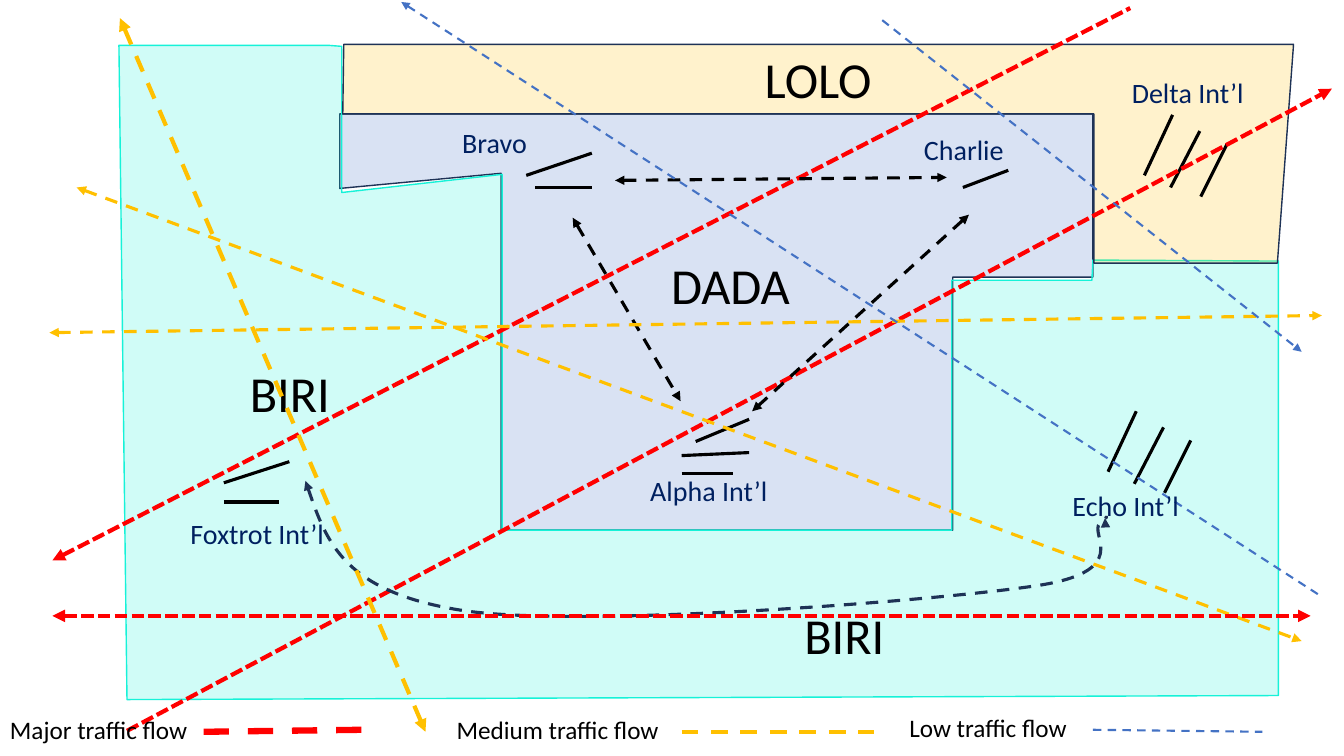
from dataclasses import dataclass
from itertools import chain

from lxml import etree
from pptx import Presentation
from pptx.dml.color import RGBColor
from pptx.enum import dml, shapes, text
from pptx.oxml import ns
from pptx import util as u

SOLID = None
DASH = dml.MSO_LINE.DASH
SHORT = dml.MSO_LINE.SQUARE_DOT


@dataclass(frozen=True)
class Theme:
    font: str = "Calibri"
    black: str = "000000"
    navy: str = "002060"
    edge: str = "1E3256"
    red: str = "FF0000"
    gold: str = "FFC000"
    blue: str = "4472C4"
    aqua: str = "16F2D8"
    sector: int = 36
    airport: int = 20
    legend: int = 18


@dataclass(frozen=True)
class Area:
    fill: str
    line: str
    points: list


@dataclass(frozen=True)
class Pen:
    color: str
    width: float
    dash: object = SOLID


@dataclass(frozen=True)
class Line:
    pen: Pen
    start: tuple
    end: tuple
    heads: str = ""  # any of "head" and "tail"


@dataclass(frozen=True)
class Label:
    words: str
    box: tuple
    size: int
    color: str = "000000"
    wrap: bool = False


T = Theme()
BOTH = "head tail"
RUNWAY = Pen(T.black, 2.25)
LINK = Pen(T.black, 2.25, DASH)
MAJOR = Pen(T.red, 3, SHORT)
MEDIUM = Pen(T.gold, 2.25, DASH)
BOLD = Pen(T.gold, 3, DASH)
LOW = Pen(T.blue, 1.5, DASH)
CURVE = Pen(T.edge, 2.25, DASH)

# Airspace sectors
AREAS = [
    Area(T.blue, T.edge, [
        (4.97, 1.72), (4.97, 5.26), (9.45, 5.26), (9.45, 2.75), (10.84, 2.75),
        (10.84, 1.13), (3.37, 1.13), (3.37, 1.87)]),
    Area(T.aqua, T.aqua, [
        (3.26, 0.45), (1.18, 0.45), (1.26, 6.94), (12.68, 6.9), (12.68, 2.59),
        (10.84, 2.58), (10.83, 2.78), (9.44, 2.78), (9.44, 5.26), (4.98, 5.26),
        (4.98, 1.73), (3.39, 1.91), (3.39, 0.46)]),
    Area(T.gold, T.edge, [
        (3.41, 0.44), (12.83, 0.44), (12.67, 2.61), (10.85, 2.61),
        (10.85, 1.13), (3.4, 1.13)]),
]
SECTORS = [
    Label("DADA", (6.55, 2.47, 1.39, 0.71), T.sector),
    Label("LOLO", (7.48, 0.43, 1.27, 0.71), T.sector),
    Label("BIRI", (7.87, 5.94, 1.01, 0.71), T.sector),
    Label("BIRI", (2.37, 3.54, 1.01, 0.71), T.sector),
]

# Runways: Echo repeats Delta's layout, shifted
DELTA = [((11.35, 1.74), (11.63, 1.14)), ((11.61, 1.86), (11.9, 1.3)),
         ((11.91, 1.95), (12.17, 1.43))]
ECHO = [tuple((x - 0.36, y + 2.94) for x, y in strip) for strip in DELTA]
ALPHA = [((6.9, 4.38), (7.43, 4.16)), ((6.76, 4.52), (7.43, 4.49)),
         ((6.76, 4.7), (7.27, 4.7))]
BRAVO = [((5.22, 1.74), (5.87, 1.52)), ((5.31, 1.86), (5.87, 1.86))]
CHARLIE = [((9.55, 1.86), (10, 1.69))]
FOXTROT = [((2.22, 4.79), (2.87, 4.58)), ((2.22, 4.98), (2.77, 4.98))]
STRIPS = [Line(RUNWAY, *strip) for strip in
          chain(ALPHA, BRAVO, CHARLIE, DELTA, ECHO, FOXTROT)]

# Traffic flows
DIAGONALS = [
    Line(MAJOR, (1.26, 7.25), (13.21, 0.88), "tail"),
    Line(MAJOR, (0.52, 5.56), (11.21, 0.08), "head"),
]
BEND = [(3.03, 4.77), (3.22, 5.33), (3.41, 5.88), (4.61, 6.06), (5.8, 6.23),
        (9.16, 5.97), (10.22, 5.82), (11.27, 5.68), (10.79, 5.3),
        (10.91, 5.19), (11.03, 5.08), (11, 5.11), (10.96, 5.14)]
FLOWS = [
    Line(LINK, (6.1, 1.79), (9.39, 1.76), BOTH),
    Line(LINK, (5.68, 2.16), (6.75, 3.98), BOTH),
    Line(LINK, (9.61, 2.13), (7.46, 4.08), BOTH),
    Line(MEDIUM, (0.49, 3.3), (13.11, 3.13), BOTH),
    Line(MEDIUM, (0.76, 1.86), (12.91, 6.36), BOTH),
    Line(LOW, (8.75, 0.2), (12.91, 3.49), "tail"),
    Line(LOW, (3.98, 0.02), (13.11, 5.92), "head"),
    Line(BOLD, (1.19, 0.18), (4.22, 7.26), BOTH),
]
BASE = Line(MAJOR, (0.52, 6.11), (13, 6.11), BOTH)

# Legend and airport names
KEYS = [
    Line(LOW, (10.84, 7.24), (12.52, 7.26)),
    Line(Pen(T.red, 4.5, DASH), (2.02, 7.26), (3.6, 7.24)),
    Line(BOLD, (6.76, 7.26), (8.67, 7.26)),
]
NAMES = [
    Label("Major traffic flow", (0, 7.04, 2.11, 0.4), T.legend, wrap=True),
    Label("Medium traffic flow", (4.43, 7.04, 2.46, 0.4), T.legend, wrap=True),
    Label("Low traffic flow", (8.92, 7.02, 1.84, 0.4), T.legend, wrap=True),
    Label("Alpha Int’l", (6.34, 4.65, 1.38, 0.44), T.airport, T.navy),
    Label("Echo Int’l", (10.53, 4.8, 1.27, 0.44), T.airport, T.navy),
    Label("Foxtrot Int’l", (1.78, 5.08, 1.54, 0.44), T.airport, T.navy),
    Label("Charlie", (9.06, 1.27, 1, 0.44), T.airport, T.navy),
    Label("Bravo", (4.48, 1.2, 0.85, 0.44), T.airport, T.navy),
    Label("Delta Int’l", (11.12, 0.7, 1.32, 0.44), T.airport, T.navy),
]


def apply(obj, form: dict) -> None:
    for key, value in form.items():
        setattr(obj, key, value)


def emu(nums) -> list:
    return [u.Inches(n) for n in nums]


def stroke(shape, pen: Pen, heads: str = "") -> None:
    shape.line.color.rgb = RGBColor.from_string(pen.color)
    apply(shape.line, {"width": u.Pt(pen.width), "dash_style": pen.dash})
    ln = shape.line._get_or_add_ln()
    for end in heads.split():
        etree.SubElement(ln, ns.qn(f"a:{end}End"), type="triangle")


def outline(slide, points: list, close: bool):
    pen = slide.shapes.build_freeform(*emu(points[0]))
    pen.add_line_segments([emu(p) for p in points[1:]], close=close)
    shape = pen.convert_to_shape()
    shape.shadow.inherit = False
    return shape


def add_area(slide, area: Area) -> None:
    shape = outline(slide, area.points, True)
    shape.fill.solid()
    shape.fill.fore_color.rgb = RGBColor.from_string(area.fill)
    tint = shape.fill._xPr.find(".//" + ns.qn("a:srgbClr"))
    etree.SubElement(tint, ns.qn("a:alpha"), val="20000")
    stroke(shape, Pen(area.line, 1))


def add_curve(slide, points: list, pen: Pen) -> None:
    shape = outline(slide, points, False)
    shape.fill.background()
    # Each three corners become one cubic segment
    track = shape._element.find(".//" + ns.qn("a:path"))
    legs = track.findall(ns.qn("a:lnTo"))
    for i in range(0, len(legs), 3):
        cubic = etree.SubElement(track, ns.qn("a:cubicBezTo"))
        for leg in legs[i:i + 3]:
            cubic.append(leg[0])
            track.remove(leg)
    stroke(shape, pen, BOTH)


def add_line(slide, line: Line) -> None:
    shape = slide.shapes.add_connector(
        shapes.MSO_CONNECTOR.STRAIGHT, *emu(line.start + line.end))
    stroke(shape, line.pen, line.heads)
    etree.SubElement(shape._element.spPr, ns.qn("a:effectLst"))


def add_label(slide, label: Label) -> None:
    frame = slide.shapes.add_textbox(*emu(label.box)).text_frame
    apply(frame, {"word_wrap": label.wrap, "text": label.words,
                  "auto_size": text.MSO_AUTO_SIZE.SHAPE_TO_FIT_TEXT})
    para = frame.paragraphs[0]
    para.alignment = text.PP_ALIGN.LEFT if label.wrap else text.PP_ALIGN.CENTER
    font = para.runs[0].font
    apply(font, {"name": T.font, "size": u.Pt(label.size)})
    font.color.rgb = RGBColor.from_string(label.color)


def main() -> None:
    deck = Presentation()
    apply(deck, {"slide_width": u.Inches(13.33), "slide_height": u.Inches(7.5)})
    slide = deck.slides.add_slide(deck.slide_layouts[6])
    for area in AREAS:
        add_area(slide, area)
    for label in SECTORS:
        add_label(slide, label)
    for line in STRIPS + DIAGONALS:
        add_line(slide, line)
    add_curve(slide, BEND, CURVE)
    for line in FLOWS + KEYS:
        add_line(slide, line)
    for label in NAMES:
        add_label(slide, label)
    add_line(slide, BASE)
    deck.save("out.pptx")


if __name__ == "__main__":
    main()
